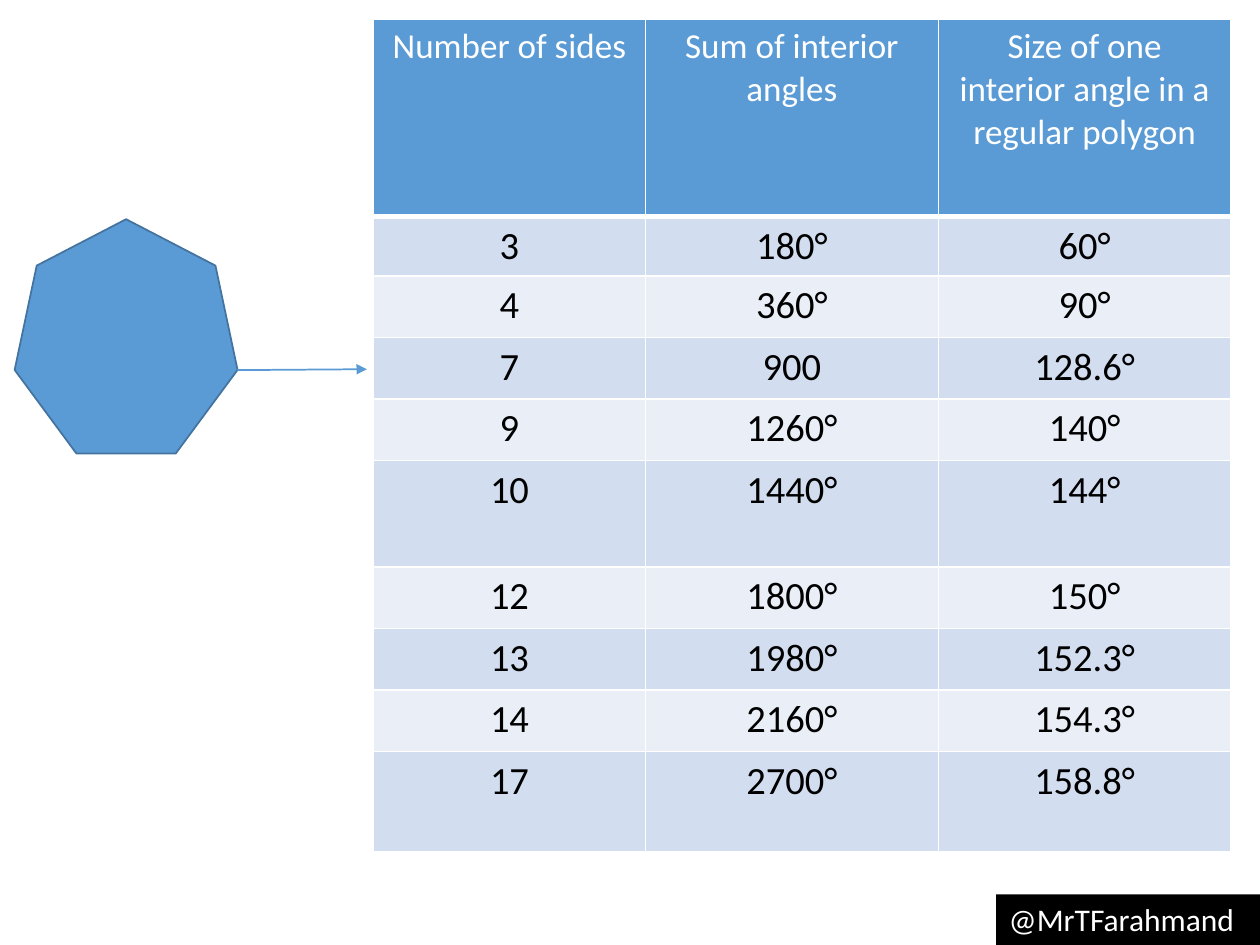
import lxml.etree
import pptx
import pptx.dml.color
import pptx.enum.shapes
import pptx.enum.text
import pptx.oxml.ns
import pptx.util

Pt = pptx.util.Pt
RGBColor = pptx.dml.color.RGBColor
MSO_SHAPE = pptx.enum.shapes.MSO_SHAPE
qn = pptx.oxml.ns.qn

BLUE = RGBColor(0x5B, 0x9B, 0xD5)
DARK_BLUE = RGBColor(0x43, 0x73, 0x9E)
BAND_DARK = RGBColor(0xD2, 0xDE, 0xEF)
BAND_LIGHT = RGBColor(0xEA, 0xEF, 0xF7)
WHITE = RGBColor(0xFF, 0xFF, 0xFF)
BLACK = RGBColor(0x00, 0x00, 0x00)

ROWS = [
    ("Number of sides", "Sum of interior angles", "Size of one interior angle in a regular polygon"),
    ("3", "180°", "60°"),
    ("4", "360°", "90°"),
    ("7", "900", "128.6°"),
    ("9", "1260°", "140°"),
    ("10", "1440°", "144°"),
    ("12", "1800°", "150°"),
    ("13", "1980°", "152.3°"),
    ("14", "2160°", "154.3°"),
    ("17", "2700°", "158.8°"),
]
COLUMN_WIDTHS = [155.5, 167.3, 167.3]
ROW_HEIGHTS = [112.8, 33.8] + [35.2] * 3 + [60.8] + [35.2] * 3 + [57.5]


def style_text(paragraph, size, color):
    for run in paragraph.runs:
        run.font.name = "Calibri"
        run.font.size = Pt(size)
        run.font.color.rgb = color


def add_borders(cell, widths):
    properties = cell._tc.get_or_add_tcPr()
    for position, (side, width) in enumerate(widths.items()):
        line = lxml.etree.Element(qn(f"a:ln{side}"), w=str(Pt(width)))
        fill = lxml.etree.SubElement(line, qn("a:solidFill"))
        lxml.etree.SubElement(fill, qn("a:srgbClr"), val=str(WHITE))
        properties.insert(position, line)


presentation = pptx.Presentation()
presentation.slide_width = Pt(720)
presentation.slide_height = Pt(540)
slide = presentation.slides.add_slide(presentation.slide_layouts[6])

handle = slide.shapes.add_shape(MSO_SHAPE.RECTANGLE, Pt(569.3), Pt(511), Pt(150.7), Pt(29))
handle.shadow.inherit = False
handle.fill.solid()
handle.fill.fore_color.rgb = BLACK
handle.line.fill.background()
handle.text_frame.text = "@MrTFarahmand"
handle.text_frame.vertical_anchor = pptx.enum.text.MSO_ANCHOR.TOP
handle.text_frame.paragraphs[0].alignment = pptx.enum.text.PP_ALIGN.LEFT
style_text(handle.text_frame.paragraphs[0], 18, WHITE)

table = slide.shapes.add_table(
    len(ROWS), len(COLUMN_WIDTHS), Pt(213.4), Pt(10.8), Pt(sum(COLUMN_WIDTHS)), Pt(sum(ROW_HEIGHTS))
).table
for column, width in zip(table.columns, COLUMN_WIDTHS):
    column.width = Pt(width)
for row_index, (values, height) in enumerate(zip(ROWS, ROW_HEIGHTS)):
    table.rows[row_index].height = Pt(height)
    is_header = row_index == 0
    band = BAND_DARK if row_index % 2 else BAND_LIGHT
    for column_index, value in enumerate(values):
        cell = table.cell(row_index, column_index)
        cell.fill.solid()
        cell.fill.fore_color.rgb = BLUE if is_header else band
        add_borders(cell, {"L": 1, "R": 1, "T": 1, "B": 3 if is_header else 1})
        cell.text_frame.text = value
        paragraph = cell.text_frame.paragraphs[0]
        paragraph.alignment = pptx.enum.text.PP_ALIGN.CENTER
        style_text(paragraph, 20 if is_header else 22, WHITE if is_header else BLACK)
        for run in paragraph.runs:
            run.font.bold = False

heptagon = slide.shapes.add_shape(MSO_SHAPE.HEPTAGON, Pt(8.4), Pt(125.3), Pt(127.4), Pt(133.9))
heptagon.shadow.inherit = False
heptagon.fill.solid()
heptagon.fill.fore_color.rgb = BLUE
heptagon.line.color.rgb = DARK_BLUE
heptagon.line.width = Pt(1)

arrow = slide.shapes.add_connector(
    pptx.enum.shapes.MSO_CONNECTOR.STRAIGHT, Pt(135.7), Pt(211.5), Pt(209.7), Pt(211)
)
arrow.line.color.rgb = BLUE
arrow.line.width = Pt(1)
lxml.etree.SubElement(arrow.line._get_or_add_ln(), qn("a:tailEnd"), type="triangle")
lxml.etree.SubElement(arrow._element.spPr, qn("a:effectLst"))

presentation.save("out.pptx")
